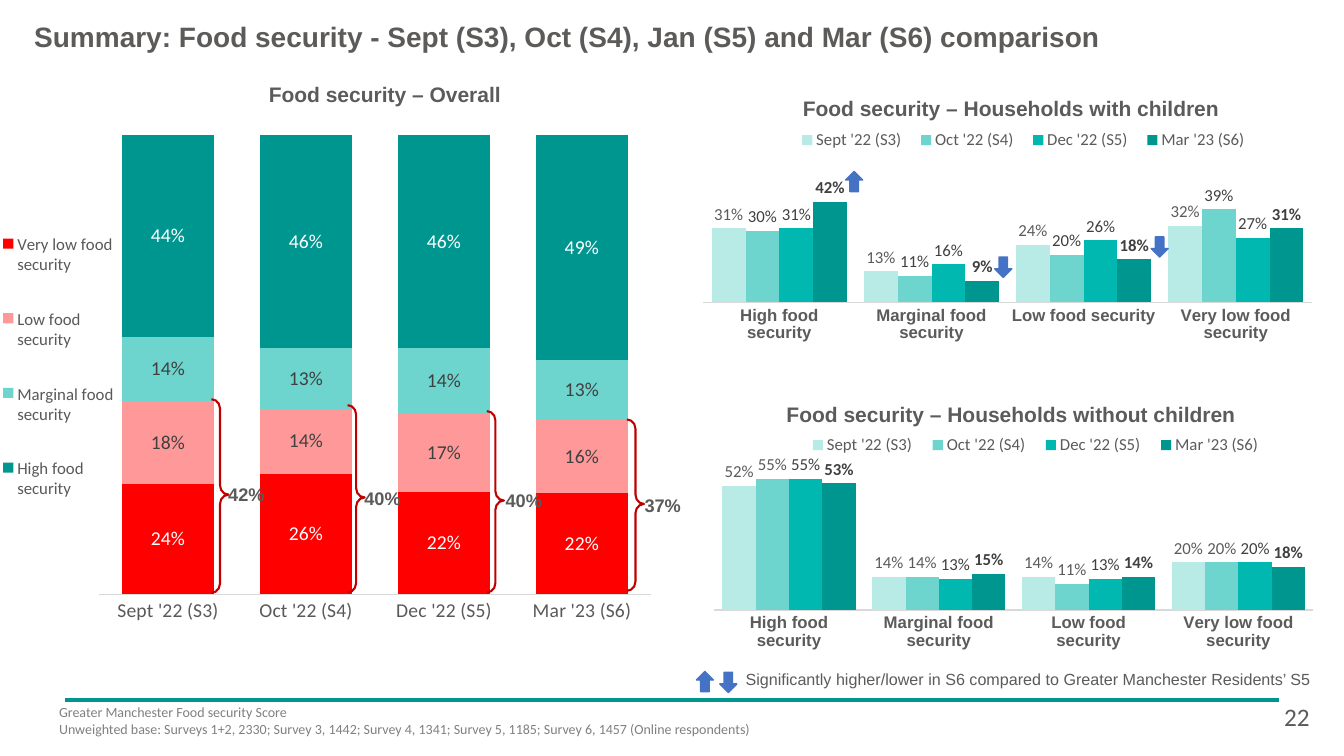
from dataclasses import dataclass
from typing import Any

import lxml.etree
import pptx
import pptx.chart.data
import pptx.dml.color
import pptx.enum.chart
import pptx.enum.shapes
import pptx.enum.text
import pptx.oxml.ns
import pptx.util

Cm = pptx.util.Cm
Pt = pptx.util.Pt
RGBColor = pptx.dml.color.RGBColor
qn = pptx.oxml.ns.qn
Kind = pptx.enum.chart.XL_CHART_TYPE
Spot = pptx.enum.chart.XL_LABEL_POSITION
Side = pptx.enum.chart.XL_LEGEND_POSITION
Form = pptx.enum.shapes.MSO_SHAPE
Align = pptx.enum.text.PP_ALIGN

TEAL = RGBColor(0x00, 0x96, 0x90)
AQUA = RGBColor(0x00, 0xB8, 0xAF)
MINT = RGBColor(0x6D, 0xD5, 0xCE)
PALE = RGBColor(0xB8, 0xEA, 0xE6)
RED = RGBColor(0xFF, 0x00, 0x00)
PINK = RGBColor(0xFF, 0x99, 0x99)
DARK_RED = RGBColor(0xC0, 0x00, 0x00)
BLUE = RGBColor(0x44, 0x72, 0xC4)
WHITE = RGBColor(0xFF, 0xFF, 0xFF)
INK = RGBColor(0x5C, 0x5B, 0x5A)
SLATE = RGBColor(0x59, 0x59, 0x59)
DARK = RGBColor(0x40, 0x40, 0x40)
GREY = RGBColor(0x80, 0x80, 0x80)
RULE = RGBColor(0xD9, 0xD9, 0xD9)

Box = tuple[float, float, float, float]


@dataclass
class Series:
    name: str
    values: list[float]
    fill: RGBColor
    ink: RGBColor
    bold: bool = False


@dataclass
class Graph:
    """One column chart; plot and legend are fractions of its box."""
    box: Box
    groups: list[str]
    series: list[Series]
    plot: Box
    legend: Box
    stacked: bool = False


@dataclass
class Brace:
    left: float
    top: float
    height: float
    label: str
    text_left: float
    text_top: float


@dataclass
class Arrow:
    left: float
    top: float
    up: bool = False


WAVES = ["Sept '22 (S3)", "Oct '22 (S4)", "Dec '22 (S5)", "Mar '23 (S6)"]
LEVELS = ["High food security", "Marginal food security",
          "Low food security", "Very low food security"]
SHADES = [PALE, MINT, AQUA, TEAL]
BAR_PLOT = (0.028, 0.006, 0.945, 0.738)


def by_wave(rows: list[list[float]], inks: list[RGBColor]) -> list[Series]:
    return [Series(name, row, fill, ink, bold=name == WAVES[-1])
            for name, row, fill, ink in zip(WAVES, rows, SHADES, inks)]


GRAPHS = [
    Graph((-0.1, 3.05, 16.54, 13.34), WAVES, [
        Series("Very low food security", [0.24, 0.26, 0.22, 0.22], RED, WHITE),
        Series("Low food security", [0.18, 0.14, 0.17, 0.16], PINK, DARK),
        Series("Marginal food security", [0.14, 0.13, 0.14, 0.13], MINT, DARK),
        Series("High food security", [0.44, 0.46, 0.46, 0.49], TEAL, WHITE),
    ], (0.157, 0.026, 0.841, 0.868), (0.005, 0.15, 0.18, 0.63), stacked=True),
    Graph((17.27, 3.07, 16.23, 6.12), LEVELS, by_wave([
        [0.31, 0.13, 0.24, 0.32], [0.30, 0.11, 0.20, 0.39],
        [0.31, 0.16, 0.26, 0.27], [0.42, 0.09, 0.18, 0.31],
    ], [INK, DARK, DARK, DARK]), BAR_PLOT, (0.16, 0.02, 0.73, 0.11)),
    Graph((17.55, 10.82, 15.98, 6.12), LEVELS, by_wave([
        [0.52, 0.14, 0.14, 0.20], [0.55, 0.14, 0.11, 0.20],
        [0.55, 0.13, 0.13, 0.20], [0.53, 0.15, 0.14, 0.18],
    ], [INK, INK, DARK, DARK]), BAR_PLOT, (0.16, 0.01, 0.75, 0.11)),
]
HEADS = [("Food security – Overall", 3.96, 2.06),
         ("Food security – Households with children", 19.74, 2.41),
         ("Food security – Households without children", 19.74, 10.13)]
BRACES = [Brace(5.33, 10.06, 4.88, "42%", 5.13, 12.19),
          Brace(8.76, 10.21, 4.72, "40%", 8.56, 12.27),
          Brace(12.27, 10.36, 4.57, "40%", 12.12, 12.32),
          Brace(15.8, 10.57, 4.32, "37%", 15.62, 12.45)]
ARROWS = [Arrow(21.31, 4.32, up=True), Arrow(25.07, 6.48), Arrow(29.01, 5.97)]
KEYS = [Arrow(18.14, 16.94), Arrow(17.55, 16.92, up=True)]


def style(font: Any, size: float, color: RGBColor,
          face: str = "Arial", bold: bool = False) -> None:
    font.size, font.name, font.bold = Pt(size), face, bold
    font.color.rgb = color


def write(shape: Any, text: str, *, size: float, color: RGBColor = INK,
          face: str = "Arial", bold: bool = False, align: Any = Align.LEFT,
          inset: bool = False, wrap: bool = True) -> None:
    frame = shape.text_frame
    frame.word_wrap = wrap
    if not inset:
        frame.margin_left = frame.margin_right = 0
        frame.margin_top = frame.margin_bottom = 0
    for i, line in enumerate(text.split("\n")):
        para = frame.add_paragraph() if i else frame.paragraphs[0]
        para.alignment = align
        run = para.add_run()
        run.text = line
        style(run.font, size, color, face, bold)


def add_text(shapes: Any, box: Box, text: str, **form: Any) -> None:
    write(shapes.add_textbox(*map(Cm, box)), text, **form)


def set_layout(parent: Any, index: int, box: Box, inner: bool = False) -> None:
    """Fix the place of a plot area or legend inside its chart."""
    for old in parent.findall(qn("c:layout")):
        parent.remove(old)
    layout = lxml.etree.Element(qn("c:layout"))
    parent.insert(index, layout)
    manual = lxml.etree.SubElement(layout, qn("c:manualLayout"))
    parts = [("layoutTarget", "inner")] if inner else []
    parts += [("xMode", "edge"), ("yMode", "edge"), *zip("xywh", map(str, box))]
    for tag, value in parts:
        lxml.etree.SubElement(manual, qn("c:" + tag)).set("val", value)


def add_graph(shapes: Any, graph: Graph) -> None:
    data = pptx.chart.data.CategoryChartData(number_format="0%")
    data.categories = graph.groups
    for item in graph.series:
        data.add_series(item.name, item.values)
    kind = Kind.COLUMN_STACKED_100 if graph.stacked else Kind.COLUMN_CLUSTERED
    chart = shapes.add_chart(kind, *map(Cm, graph.box), data).chart
    chart.has_title = False
    style(chart.font, 10, INK, "Calibri")

    plot = chart.plots[0]
    plot.gap_width = 50
    plot.overlap = 100 if graph.stacked else 0
    plot.vary_by_categories = False
    for bars, item in zip(plot.series, graph.series):
        bars.format.fill.solid()
        bars.format.fill.fore_color.rgb = item.fill
        labels = bars.data_labels
        labels.show_value = True
        labels.number_format, labels.number_format_is_linked = "0%", False
        labels.position = Spot.CENTER if graph.stacked else Spot.OUTSIDE_END
        style(labels.font, 14 if graph.stacked else 12, item.ink,
              "Calibri", item.bold)

    scale = chart.value_axis
    scale.visible = scale.has_major_gridlines = False
    scale.minimum_scale = 0
    scale.maximum_scale = 1 if graph.stacked else 0.75
    axis = chart.category_axis
    axis.major_tick_mark = pptx.enum.chart.XL_TICK_MARK.NONE
    axis.format.line.color.rgb = RULE
    axis.format.line.width = Pt(0.75)
    if graph.stacked:
        style(axis.tick_labels.font, 14, SLATE, "Calibri")
    else:
        style(axis.tick_labels.font, 12, INK, bold=True)

    chart.has_legend = True
    legend = chart.legend
    legend.position = Side.BOTTOM if graph.stacked else Side.RIGHT
    legend.include_in_layout = False
    style(legend.font, 12, SLATE if graph.stacked else INK, "Calibri")
    set_layout(legend._element, 1, graph.legend)
    area = chart._chartSpace.find(".//" + qn("c:plotArea"))
    set_layout(area, 0, graph.plot, inner=True)


def add_brace(shapes: Any, brace: Brace) -> None:
    box = (brace.left, brace.top, 0.43, brace.height)
    shape = shapes.add_shape(Form.RIGHT_BRACE, *map(Cm, box))
    shape.shadow.inherit = False
    shape.adjustments[0], shape.adjustments[1] = 0.545, 0.493
    shape.fill.background()
    shape.line.color.rgb = DARK_RED
    shape.line.width = Pt(1.5)
    add_text(shapes, (brace.text_left, brace.text_top, 2.16, 0.56),
             brace.label, size=13, bold=True, align=Align.CENTER)


def add_arrow(shapes: Any, arrow: Arrow) -> None:
    box = (arrow.left, arrow.top, 0.43, 0.51)
    shape = shapes.add_shape(Form.DOWN_ARROW, *map(Cm, box))
    shape.shadow.inherit = False
    shape.rotation = 180 if arrow.up else 0
    shape.fill.solid()
    shape.fill.fore_color.rgb = shape.line.color.rgb = BLUE
    shape.line.width = Pt(1)


def add_rule(shapes: Any) -> None:
    straight = pptx.enum.shapes.MSO_CONNECTOR.STRAIGHT
    rule = shapes.add_connector(straight, *map(Cm, (1.63, 17.63, 32.23, 17.63)))
    rule.line.color.rgb = TEAL
    rule.line.width = Pt(3)
    lxml.etree.SubElement(rule._element.spPr, qn("a:effectLst"))


def main() -> None:
    deck = pptx.Presentation()
    deck.slide_width, deck.slide_height = Cm(33.87), Cm(19.05)
    shapes = deck.slides.add_slide(deck.slide_layouts[5]).shapes
    add_rule(shapes)
    title = shapes.title
    title.left, title.top, title.width, title.height = map(
        Cm, (0.86, 0.48, 29.95, 0.86))
    title.text_frame.vertical_anchor = pptx.enum.text.MSO_ANCHOR.MIDDLE
    title.text_frame.auto_size = pptx.enum.text.MSO_AUTO_SIZE.NONE
    write(title, "Summary: Food security - Sept (S3), Oct (S4), Jan (S5) "
          "and Mar (S6) comparison", size=20, bold=True)
    for graph in GRAPHS:
        add_graph(shapes, graph)
    for text, left, top in HEADS:
        add_text(shapes, (left, top, 11.48, 0.64), text, size=15, bold=True,
                 align=Align.CENTER)
    for brace in BRACES:
        add_brace(shapes, brace)
    for arrow in ARROWS:
        add_arrow(shapes, arrow)
    group = shapes.add_group_shape().shapes
    for arrow in KEYS:
        add_arrow(group, arrow)
    add_text(group, (18.54, 16.74, 15.11, 0.74), "Significantly higher/lower in S6 "
             "compared to Greater Manchester Residents’ S5",
             size=11.5, inset=True, wrap=False)
    add_text(shapes, (1.24, 17.6, 30.43, 1.42), "Greater Manchester Food security "
             "Score\nUnweighted base: Surveys 1+2, 2330; Survey 3, 1442; Survey 4, "
             "1341; Survey 5, 1185; Survey 6, 1457 (Online respondents)",
             size=10, color=GREY, face="Calibri", inset=True)
    add_text(shapes, (32.11, 17.55, 1.35, 1.02), "22", size=18, face="Calibri",
             inset=True)
    deck.save("out.pptx")


if __name__ == "__main__":
    main()
